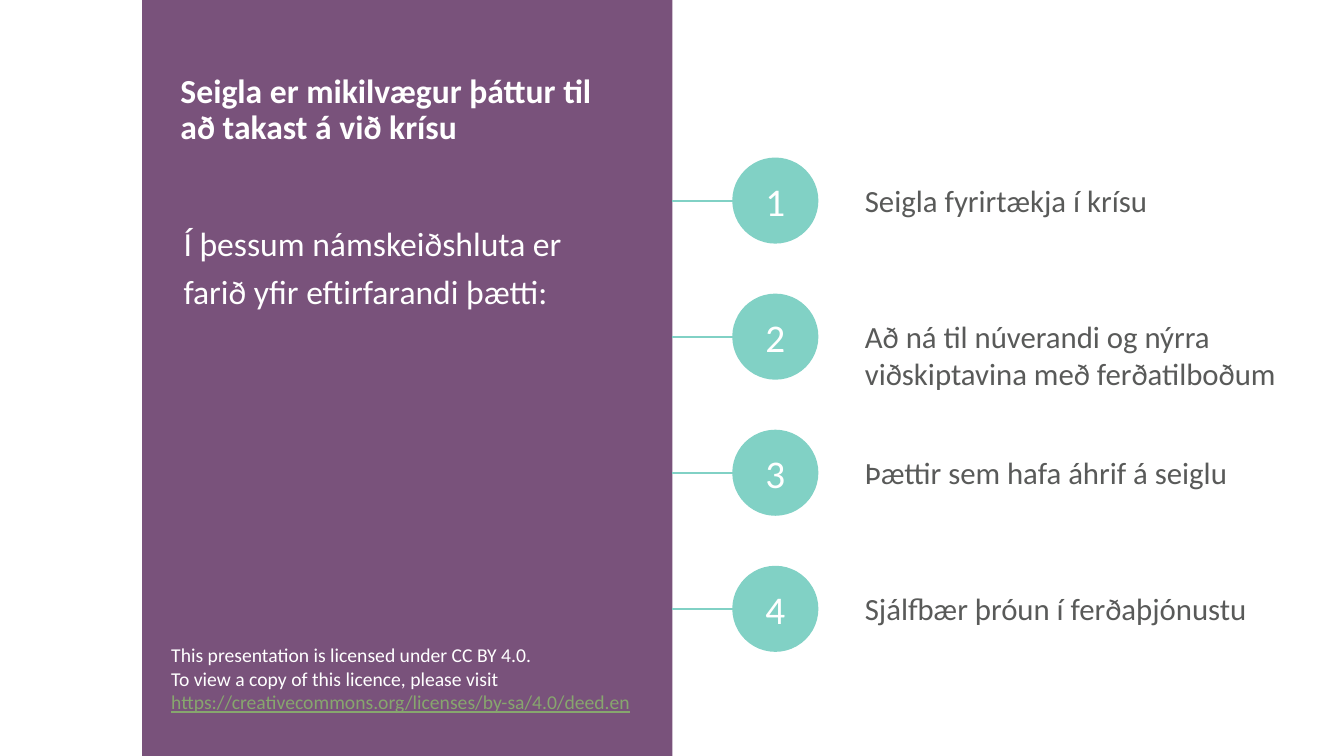
from lxml import etree
from pptx import Presentation, util as u
from pptx.dml.color import RGBColor
from pptx.enum import shapes, text
from pptx.oxml.ns import qn

PURPLE, TEAL, GREY, GREEN, WHITE = "79527B", "81D1C5", "595A59", "87A66E", "FFFFFF"
PANEL_LEFT, PANEL_WIDTH = 1.41, 5.26
PANEL_RIGHT = PANEL_LEFT + PANEL_WIDTH
CIRCLE_LEFT, CIRCLE_SIZE = 7.27, 0.84
FIRST_TOP, ROW_STEP = 1.57, 1.35
TOPICS = [
    "Seigla fyrirtækja í krísu",
    "Að ná til núverandi og nýrra viðskiptavina með ferðatilboðum",
    "Þættir sem hafa áhrif á seiglu",
    "Sjálfbær þróun í ferðaþjónustu",
]


def colour(value):
    return RGBColor.from_string(value)


def style(box, size, value, bold=False, align=text.PP_ALIGN.LEFT, anchor=text.MSO_ANCHOR.TOP):
    """Wrap the text of a shape and format all its runs alike."""
    frame = box.text_frame
    frame.word_wrap = True
    frame.auto_size = text.MSO_AUTO_SIZE.NONE
    frame.vertical_anchor = anchor
    for para in frame.paragraphs:
        para.alignment = align
        for span in para.runs:
            span.font.name = "Calibri"
            span.font.size = u.Pt(size)
            span.font.bold = bold
            span.font.color.rgb = colour(value)


deck = Presentation()
deck.slide_width, deck.slide_height = u.Inches(13.33), u.Inches(7.5)
page = deck.slides.add_slide(deck.slide_layouts[1])
title, body = page.placeholders

# Purple panel, behind the placeholders
panel = page.shapes.add_shape(shapes.MSO_SHAPE.RECTANGLE, u.Inches(PANEL_LEFT), 0,
                              u.Inches(PANEL_WIDTH), deck.slide_height)
panel.shadow.inherit = False
panel.fill.solid()
panel.fill.fore_color.rgb = colour(PURPLE)
panel.line.fill.background()
title.element.addprevious(panel.element)

# Title and introduction
title.left, title.top, title.width, title.height = map(u.Inches, (1.69, 0.69, 4.65, 0.66))
title.text_frame.text = "Seigla er mikilvægur þáttur til að takast á við krísu"
title.text_frame.paragraphs[0].line_spacing = 0.9
style(title, 24, WHITE, bold=True)

body.left, body.top, body.width, body.height = map(u.Inches, (1.72, 2.08, 4.57, 4.97))
body.text_frame.text = "Í þessum námskeiðshluta er farið yfir eftirfarandi þætti:"
intro = body.text_frame.paragraphs[0]
intro.line_spacing = 1.2
intro.space_before = u.Pt(0)
properties = intro._p.get_or_add_pPr()
properties.set("marL", "0")
properties.set("indent", "0")
etree.SubElement(properties, qn("a:buNone"))
style(body, 24, WHITE)

# Licence
licence = page.shapes.add_textbox(*map(u.Inches, (1.6, 6.33, 5.09, 0.81)))
licence.text_frame.text = ("This presentation is licensed under CC BY 4.0.\n"
                           "To view a copy of this licence, please visit ")
address = licence.text_frame.paragraphs[1].add_run()
address.text = "https://creativecommons.org/licenses/by-sa/4.0/deed.en"
style(licence, 14, WHITE)
address.font.color.rgb = colour(GREEN)
address.font.underline = True

# Numbered topics
for row, topic in enumerate(TOPICS):
    top = FIRST_TOP + row * ROW_STEP
    middle = u.Inches(top + CIRCLE_SIZE / 2)

    line = page.shapes.add_connector(shapes.MSO_CONNECTOR.STRAIGHT, u.Inches(PANEL_RIGHT), middle,
                                     u.Inches(CIRCLE_LEFT), middle)
    line.line.color.rgb = colour(TEAL)
    line.line.width = u.Pt(1.5)
    etree.SubElement(line._element.spPr, qn("a:effectLst"))

    circle = page.shapes.add_shape(shapes.MSO_SHAPE.OVAL, u.Inches(CIRCLE_LEFT), u.Inches(top),
                                   u.Inches(CIRCLE_SIZE), u.Inches(CIRCLE_SIZE))
    circle.shadow.inherit = False
    circle.fill.solid()
    circle.fill.fore_color.rgb = colour(TEAL)
    circle.line.color.rgb = colour(TEAL)
    circle.line.width = u.Pt(1)
    circle.text_frame.text = str(row + 1)
    style(circle, 28, WHITE, align=text.PP_ALIGN.CENTER, anchor=text.MSO_ANCHOR.MIDDLE)

    label = page.shapes.add_textbox(u.Inches(8.48), u.Inches(top + 0.18),
                                    u.Inches(4.35), u.Inches(0.84 if row == 1 else 0.47))
    label.text_frame.text = topic
    style(label, 22, GREY)

deck.save("out.pptx")
